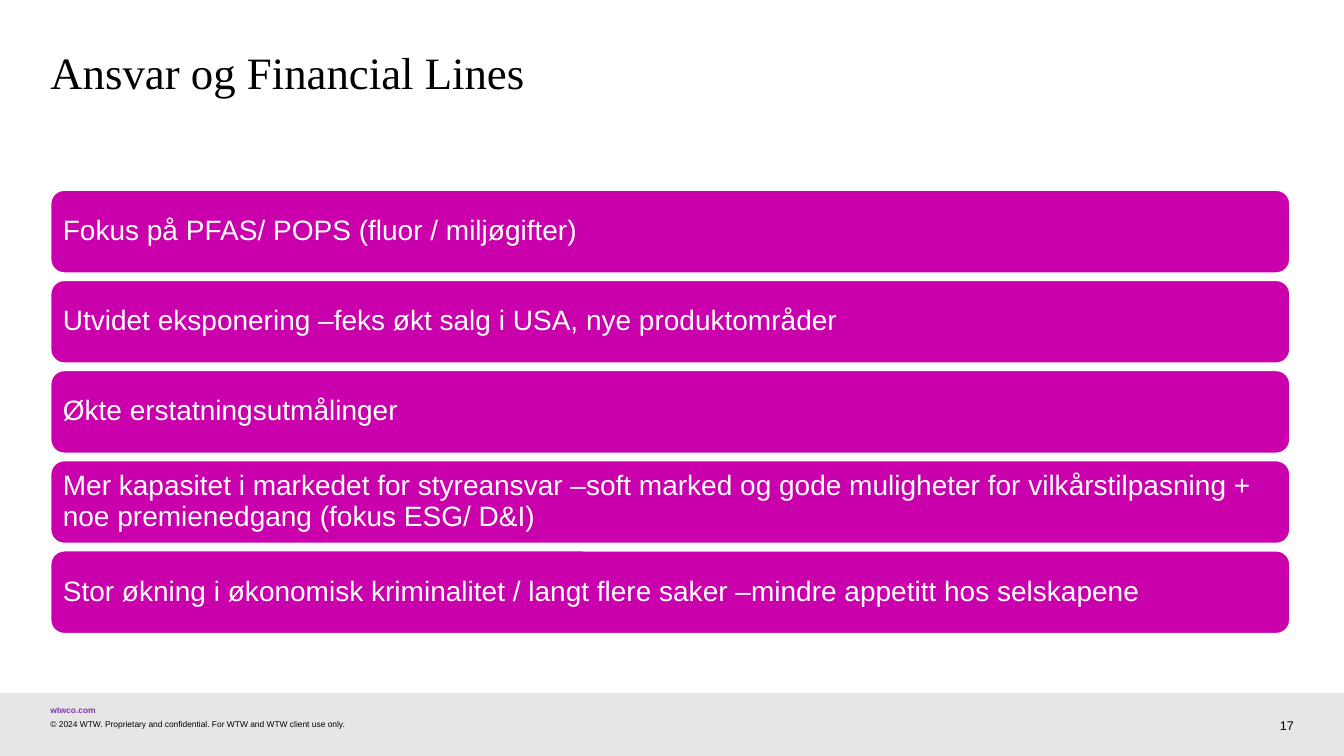
from pptx import Presentation
from pptx.dml.color import RGBColor
from pptx.enum.shapes import MSO_SHAPE as SHAPE
from pptx.enum.text import MSO_ANCHOR as ANCHOR, PP_ALIGN as ALIGN
from pptx.util import Pt

# Content
TITLE = "Ansvar og Financial Lines"
TOPICS = [
    "Fokus på PFAS/ POPS (fluor / miljøgifter)",
    "Utvidet eksponering –feks økt salg i USA, nye produktområder",
    "Økte erstatningsutmålinger",
    "Mer kapasitet i markedet for styreansvar –soft marked og gode muligheter "
    "for vilkårstilpasning + noe premienedgang (fokus ESG/ D&I)",
    "Stor økning i økonomisk kriminalitet / langt flere saker –mindre appetitt "
    "hos selskapene",
]
WEB = "wtwco.com"
COPYRIGHT = "© 2024 WTW. Proprietary and confidential. For WTW and WTW client use only."
PAGE = "17"


class Theme:
    heading, body = "Times New Roman", "Arial"
    black, white = "000000", "FFFFFF"
    magenta, purple, grey = "C900AC", "7F35B2", "E6E6E6"
    title, topic, page, footer = 32, 20, 9, 6


# Layout in points
WIDTH, HEIGHT = 960, 540
MARGIN, CONTENT_W = 36, 885.6
BAR_TOP, BAR_H, BAR_GAP = 135.6, 59.6, 4.8
FOOTER_TOP = 495


def write(s, text, size, color, font=Theme.body, inset=0, anchor=ANCHOR.TOP,
          align=ALIGN.LEFT, spacing=None, bold=False, wrap=True):
    tf = s.text_frame
    tf.text = text
    tf.word_wrap = wrap
    tf.vertical_anchor = anchor
    tf.margin_left = tf.margin_right = Pt(inset)
    tf.margin_top = tf.margin_bottom = Pt(inset)
    p = tf.paragraphs[0]
    p.alignment = align
    p.line_spacing = spacing
    r = p.runs[0]
    r.font.name, r.font.size, r.font.bold = font, Pt(size), bold
    r.font.color.rgb = RGBColor.from_string(color)


def add_box(slide, x, y, w, h, text, size, color, **style):
    s = slide.shapes.add_textbox(Pt(x), Pt(y), Pt(w), Pt(h))
    write(s, text, size, color, **style)


def add_panel(slide, kind, x, y, w, h, fill, line=None):
    s = slide.shapes.add_shape(kind, Pt(x), Pt(y), Pt(w), Pt(h))
    s.shadow.inherit = False
    s.fill.solid()
    s.fill.fore_color.rgb = RGBColor.from_string(fill)
    if line:
        s.line.color.rgb = RGBColor.from_string(line)
        s.line.width = Pt(1.5)
    else:
        s.line.fill.background()
    return s


def main():
    prs = Presentation()
    prs.slide_width, prs.slide_height = Pt(WIDTH), Pt(HEIGHT)
    slide = prs.slides.add_slide(prs.slide_layouts[6])

    # Footer
    add_panel(slide, SHAPE.RECTANGLE, 0, FOOTER_TOP, WIDTH, HEIGHT - FOOTER_TOP, Theme.grey)
    add_box(slide, MARGIN, 504, 32.4, 7.2, WEB, Theme.footer, Theme.purple,
            bold=True, wrap=False)
    add_box(slide, MARGIN, 513.6, 252, 7.2, COPYRIGHT, Theme.footer, Theme.black)
    add_box(slide, 900, 507, 24.2, 16.5, PAGE, Theme.page, Theme.black,
            anchor=ANCHOR.BOTTOM, align=ALIGN.RIGHT)

    # Title
    add_box(slide, MARGIN, 36, CONTENT_W, 36, TITLE, Theme.title, Theme.black,
            font=Theme.heading, spacing=0.9)

    # Topic bars
    for i, topic in enumerate(TOPICS):
        y = BAR_TOP + i * (BAR_H + BAR_GAP)
        s = add_panel(slide, SHAPE.ROUNDED_RECTANGLE, MARGIN, y, CONTENT_W, BAR_H,
                      Theme.magenta, Theme.white)
        write(s, topic, Theme.topic, Theme.white, inset=6, anchor=ANCHOR.MIDDLE, spacing=0.9)

    prs.save("out.pptx")


if __name__ == "__main__":
    main()
